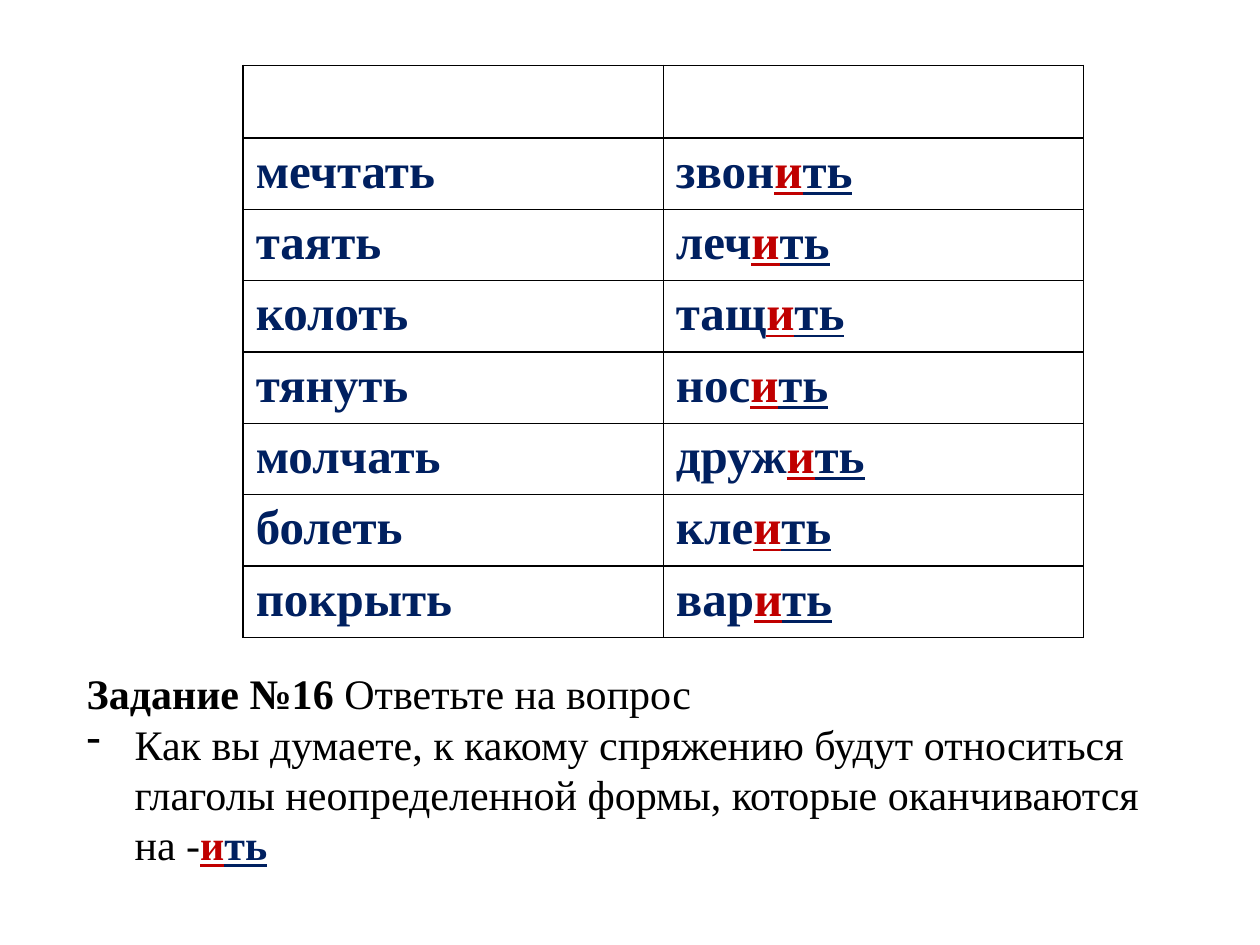
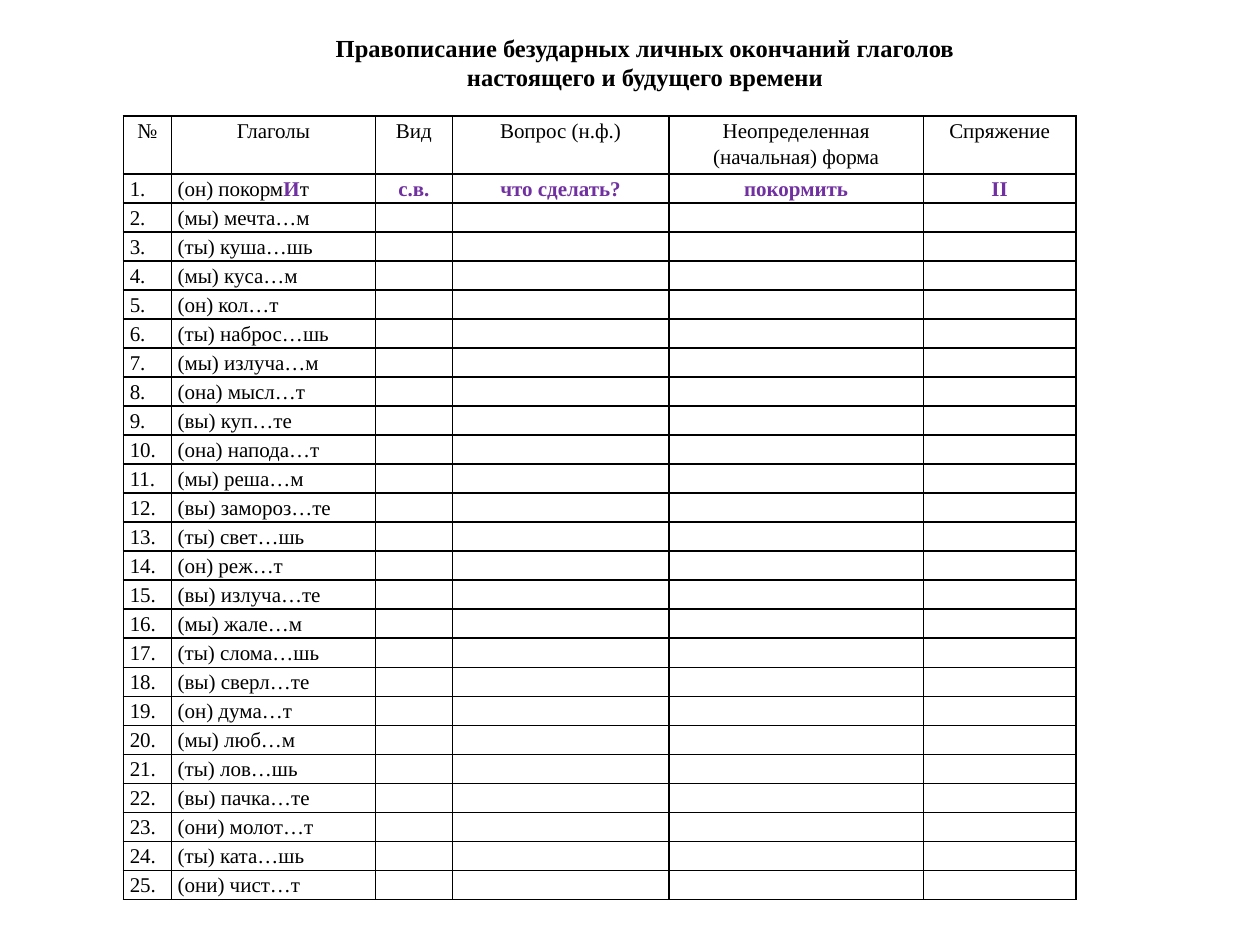
from dataclasses import dataclass
from typing import Optional

from lxml import etree
from pptx import Presentation
from pptx import util as u
from pptx.dml.color import RGBColor
from pptx.enum import text
from pptx.oxml.ns import qn

# Shared look
FONT = "Times New Roman"
BLACK = RGBColor(0x00, 0x00, 0x00)
NAVY = RGBColor(0x00, 0x20, 0x60)
RED = RGBColor(0xC0, 0x00, 0x00)
PURPLE = RGBColor(0x70, 0x30, 0xA0)
LEFT, CENTER = text.PP_ALIGN.LEFT, text.PP_ALIGN.CENTER

# Grid of 100 columns by 100 rows on the slide
SLIDE_W, SLIDE_H = u.Inches(10), u.Inches(7.5)


def cols(count: float) -> int:
    return round(SLIDE_W * count / 100)


def rows(count: float) -> int:
    return round(SLIDE_H * count / 100)


@dataclass(frozen=True)
class Run:
    words: str
    color: Optional[RGBColor] = None
    bold: Optional[bool] = None
    underline: bool = False


@dataclass(frozen=True)
class Area:
    left: float
    top: float
    width: float
    height: float

    def emu(self) -> tuple[int, int, int, int]:
        return cols(self.left), rows(self.top), cols(self.width), rows(self.height)


@dataclass(frozen=True)
class TableStyle:
    size: float
    color: RGBColor = BLACK
    bold: bool = False
    spacing: float = 1.0
    margins: tuple[float, float] = (0.1, 0.05)  # side, top and bottom, in inches


Line = tuple[Run, ...]
ENDING: Line = (Run("и", RED, True, True), Run("ть", NAVY, True, True))


def write(paragraph, line: Line, *, size: float, color: RGBColor = BLACK,
          bold: bool = False, align=LEFT, spacing: float = 1.0) -> None:
    """Fill one paragraph with formatted runs."""
    paragraph.alignment = align
    paragraph.line_spacing = spacing
    for part in line:
        run = paragraph.add_run()
        run.text = part.words
        run.font.name, run.font.size = FONT, u.Pt(size)
        run.font.bold = bold if part.bold is None else part.bold
        run.font.underline = part.underline
        run.font.color.rgb = part.color or color
    if not line:  # an empty cell keeps the row height of its text size
        etree.SubElement(paragraph._p, qn("a:endParaRPr"), sz=str(round(size * 100)))


def add_borders(cell) -> None:
    properties = cell._tc.get_or_add_tcPr()
    for index, side in enumerate(("lnL", "lnR", "lnT", "lnB")):
        border = etree.Element(qn(f"a:{side}"), w=str(u.Pt(1)))
        fill = etree.SubElement(border, qn("a:solidFill"))
        etree.SubElement(fill, qn("a:srgbClr"), val=str(BLACK))
        properties.insert(index, border)


def add_grid_table(slide, area: Area, widths: list[float], heights: list[float],
                   cells: list[list[Line]], style: TableStyle, centered=lambda r, c: False) -> None:
    """Draw a plain ruled table; widths and heights are proportions."""
    left, top, width, height = area.emu()
    table = slide.shapes.add_table(len(heights), len(widths), left, top, width, height).table
    table.first_row = table.horz_banding = False
    for column, share in zip(table.columns, widths):
        column.width = round(width * share / sum(widths))
    for row, share in zip(table.rows, heights):
        row.height = round(height * share / sum(heights))
    side, edge = map(u.Inches, style.margins)
    for r, line_row in enumerate(cells):
        for c, line in enumerate(line_row):
            cell = table.cell(r, c)
            cell.margin_left = cell.margin_right = side
            cell.margin_top = cell.margin_bottom = edge
            cell.fill.background()
            add_borders(cell)
            write(cell.text_frame.paragraphs[0], line, size=style.size, color=style.color,
                  bold=style.bold, spacing=style.spacing,
                  align=CENTER if centered(r, c) else LEFT)


def add_text(slide, area: Area, lines: list[Line], *, wrap: bool = True, **look):
    frame = slide.shapes.add_textbox(*area.emu()).text_frame
    frame.word_wrap = wrap
    for index, line in enumerate(lines):
        write(frame.add_paragraph() if index else frame.paragraphs[0], line, **look)
    return frame


def add_dash(paragraph) -> None:
    indent = u.Inches(0.38)
    properties = paragraph._p.get_or_add_pPr()
    properties.set("marL", str(indent))
    properties.set("indent", str(-indent))
    etree.SubElement(properties, qn("a:buFontTx"))
    etree.SubElement(properties, qn("a:buChar"), char="-")


# Slide 1: verbs by infinitive ending
VERB_PAIRS = [
    ("мечтать", "звон"), ("таять", "леч"), ("колоть", "тащ"), ("тянуть", "нос"),
    ("молчать", "друж"), ("болеть", "кле"), ("покрыть", "вар"),
]


def build_infinitives(slide) -> None:
    cells = [[(), ()]] + [[(Run(verb),), (Run(stem), *ENDING)] for verb, stem in VERB_PAIRS]
    add_grid_table(slide, Area(19.3, 6.93, 66.7, 60.4), [1, 1], [1] * len(cells), cells,
                   TableStyle(28, NAVY, True))
    question = ("Как вы думаете, к какому спряжению будут относиться глаголы "
                "неопределенной формы, которые оканчиваются на -")
    task = add_text(slide, Area(5.9, 70, 89, 22.93), [
        (Run("Задание №16 ", bold=True), Run("Ответьте на вопрос")),
        (Run(question), *ENDING),
    ], size=24)
    add_dash(task.paragraphs[1])


# Slide 2: exercise on unstressed personal endings
HEADINGS = ["№", "Глаголы", "Вид", "Вопрос (н.ф.)", "Неопределенная (начальная) форма", "Спряжение"]
COLUMN_WIDTHS = [0.38, 1.62, 0.61, 1.72, 2.02, 1.21]
SAMPLE_ANSWERS = ["с.в.", "что сделать?", "покормить", "II"]
EXERCISES = [
    "(мы) мечта…м", "(ты) куша…шь", "(мы) куса…м", "(он) кол…т", "(ты) наброс…шь",
    "(мы) излуча…м", "(она) мысл…т", "(вы) куп…те", "(она) напода…т", "(мы) реша…м",
    "(вы) замороз…те", "(ты) свет…шь", "(он) реж…т", "(вы) излуча…те", "(мы) жале…м",
    "(ты) слома…шь", "(вы) сверл…те", "(он) дума…т", "(мы) люб…м", "(ты) лов…шь",
    "(вы) пачка…те", "(они) молот…т", "(ты) ката…шь", "(они) чист…т",
]


def build_endings(slide) -> None:
    sample_verb = (Run("(он) покорм"), Run("И", PURPLE, True), Run("т"))
    answers = [(Run(answer, PURPLE, True),) for answer in SAMPLE_ANSWERS]
    cells = [[(Run(heading),) for heading in HEADINGS],
             [(Run("1."),), sample_verb, *answers]]
    for number, verb in enumerate(EXERCISES, start=2):
        cells.append([(Run(f"{number}."),), (Run(verb),)] + [()] * len(answers))
    add_grid_table(slide, Area(9.8, 12.27, 75.6, 82.8), COLUMN_WIDTHS,
                   [2] + [1] * (len(cells) - 1), cells,
                   TableStyle(12, spacing=1.15, margins=(0.05, 0)),
                   centered=lambda r, c: r == 0 or c > 1)
    title = add_text(slide, Area(25.4, 2.53, 51.6, 11.73), [
        (Run("Правописание безударных личных окончаний глаголов"),),
        (Run("настоящего и будущего времени"),),
    ], wrap=False, size=14, bold=True, align=CENTER)
    title.margin_top = u.Inches(0.07)


def main() -> None:
    deck = Presentation()
    deck.slide_width, deck.slide_height = SLIDE_W, SLIDE_H
    for build in (build_infinitives, build_endings):
        build(deck.slides.add_slide(deck.slide_layouts[6]))
    deck.save("out.pptx")


if __name__ == "__main__":
    main()
